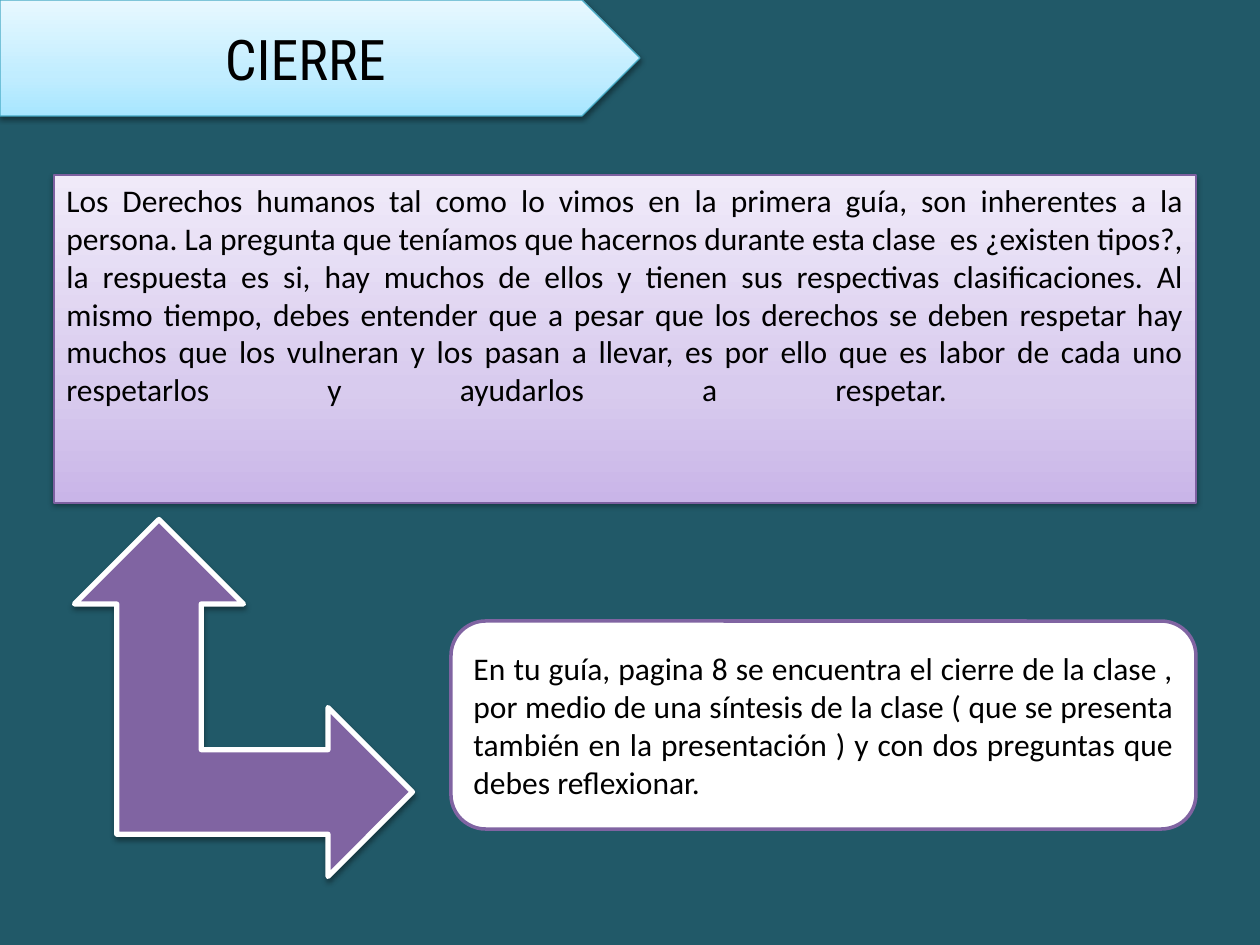
from lxml import etree
from pptx import Presentation
from pptx.dml.color import RGBColor
from pptx.enum.shapes import MSO_SHAPE
from pptx.enum.text import MSO_ANCHOR, PP_ALIGN
from pptx.oxml.ns import qn
from pptx.util import Emu, Pt

BOX, PENTAGON = MSO_SHAPE.RECTANGLE, MSO_SHAPE.PENTAGON
ROUNDED, CORNER_ARROW = MSO_SHAPE.ROUNDED_RECTANGLE, MSO_SHAPE.LEFT_UP_ARROW
TOP, MIDDLE = MSO_ANCHOR.TOP, MSO_ANCHOR.MIDDLE
CENTER, JUSTIFY = PP_ALIGN.CENTER, PP_ALIGN.JUSTIFY

EMU_PER_PX = 914400 / 126
STOPS = (0, 35, 100)
LILAC = ("C9B5E8", "D8CBEE", "F0EAF9")
SKY = ("A7E6FF", "C1EDFF", "E7F8FF")
PURPLE, WHITE, BLACK = "8064A2", "FFFFFF", "000000"

SUMMARY = (
    "Los Derechos humanos tal como lo vimos en la primera guía, son inherentes a la persona. "
    "La pregunta que teníamos que hacernos durante esta clase  es ¿existen tipos?, la respuesta "
    "es si, hay muchos de ellos y tienen sus respectivas clasificaciones. Al mismo tiempo, debes "
    "entender que a pesar que los derechos se deben respetar hay muchos que los vulneran y los "
    "pasan a llevar, es por ello que es labor de cada uno respetarlos y ayudarlos a respetar.  \v"
)
TASK = (
    "En tu guía, pagina 8 se encuentra el cierre de la clase , por medio de una síntesis de la "
    "clase ( que se presenta también en la presentación ) y con dos preguntas que debes reflexionar."
)


def px(n):
    return Emu(round(n * EMU_PER_PX))


def rgb(color):
    return RGBColor.from_string(color)


def add_color(parent, color):
    return etree.SubElement(parent, qn("a:srgbClr"), val=color)


class SlideBuilder:
    """Holds the text style and the slide being drawn."""

    text_format = {"name": "Calibri", "size": Pt(18)}

    def __init__(self, slide, background):
        self.slide = slide
        fill = slide.background.fill
        fill.solid()
        fill.fore_color.rgb = rgb(background)

    def shape(self, kind, box, fill, line, width, shadow=True):
        """Add a shape; a tuple of colours as fill is a gradient from bottom to top."""
        sp = self.slide.shapes.add_shape(kind, *map(px, box))
        sp.line.color.rgb = rgb(line)
        sp.line.width = Pt(width)
        if isinstance(fill, tuple):
            self.gradient(sp, fill)
        else:
            sp.fill.solid()
            sp.fill.fore_color.rgb = rgb(fill)
        sp.shadow.inherit = False
        if shadow:
            self.drop_shadow(sp)
        return sp

    def gradient(self, sp, colors):
        sp.fill.gradient()
        sp.fill.gradient_angle = 90
        stops = sp.element.spPr.find(".//" + qn("a:gsLst"))
        for stop in list(stops):
            stops.remove(stop)
        for pos, color in zip(STOPS, colors):
            add_color(etree.SubElement(stops, qn("a:gs"), pos=str(pos * 1000)), color)

    def drop_shadow(self, sp):
        effects = sp.element.spPr.find(qn("a:effectLst"))
        shadow = etree.SubElement(effects, qn("a:outerShdw"), blurRad="40000", dist="20000",
                                  dir="5400000", rotWithShape="0")
        etree.SubElement(add_color(shadow, BLACK), qn("a:alpha"), val="38000")

    def text(self, sp, text, align, anchor=MIDDLE, **changes):
        tf = sp.text_frame
        tf.word_wrap = True
        tf.vertical_anchor = anchor
        p = tf.paragraphs[0]
        p.text = text
        p.alignment = align
        for r in p.runs:
            for name, value in {**self.text_format, **changes}.items():
                setattr(r.font, name, value)
            r.font.color.rgb = rgb(BLACK)


def main():
    prs = Presentation()
    prs.slide_width, prs.slide_height = px(1260), px(945)
    s = SlideBuilder(prs.slides.add_slide(prs.slide_layouts[6]), "215968")

    summary = s.shape(BOX, (54, 175, 1142, 328), LILAC, "7D60A0", 0.75)
    s.text(summary, SUMMARY, JUSTIFY, TOP)

    heading = s.shape(PENTAGON, (0, 0, 640, 116), SKY, "46AAC5", 0.75)
    s.text(heading, "CIERRE", CENTER, name="Roboto Condensed", size=Pt(32))

    arrow = s.shape(CORNER_ARROW, (65, 529, 357, 338), PURPLE, WHITE, 3)
    arrow.rotation = 90

    task = s.shape(ROUNDED, (451, 621, 745, 208), WHITE, PURPLE, 2, shadow=False)
    s.text(task, TASK, JUSTIFY)

    prs.save("out.pptx")


if __name__ == "__main__":
    main()
